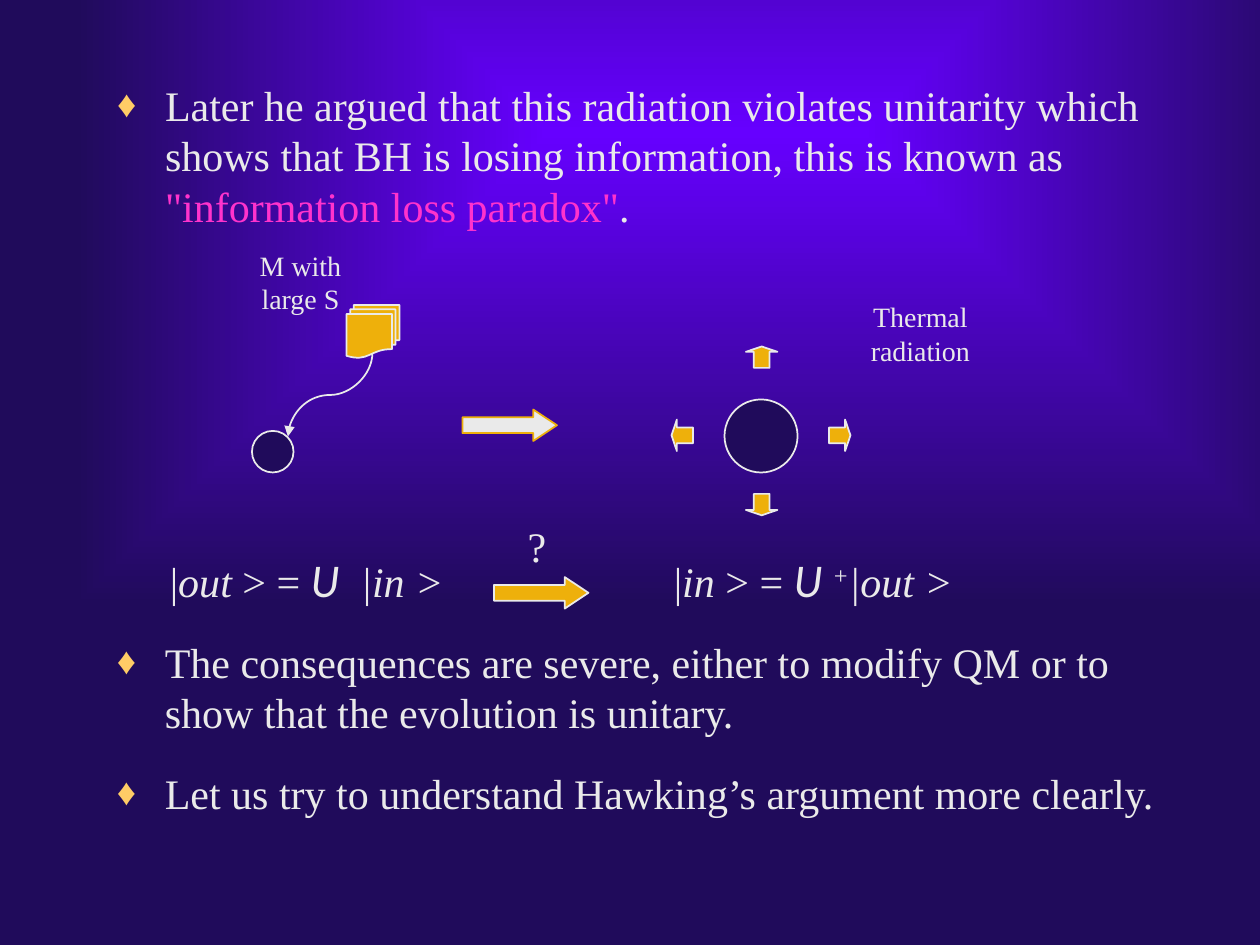
from lxml.etree import SubElement
from pptx import Presentation
from pptx.dml.color import RGBColor
from pptx.enum.shapes import MSO_CONNECTOR, MSO_SHAPE
from pptx.enum.text import MSO_ANCHOR, MSO_AUTO_SIZE, PP_ALIGN
from pptx.oxml import parse_xml
from pptx.oxml.ns import nsdecls, qn
from pptx.util import Inches, Pt

NAVY = RGBColor(0x20, 0x0B, 0x5B)
VIOLET = RGBColor(0x66, 0x00, 0xFF)
PALE = RGBColor(0xEA, 0xEA, 0xEA)
GOLD = RGBColor(0xEE, 0xB0, 0x0B)
PINK = RGBColor(0xFF, 0x33, 0xCC)
BULLET = RGBColor(0xFF, 0xCC, 0x66)
SERIF = "Times New Roman"
SANS = "Lato"


class SlideBuilder:
    """Holds the text style and the current slide, and draws its elements."""

    def __init__(self, slide, font=SERIF, color=PALE):
        self.slide = slide
        self.font = font
        self.color = color

    def background(self, inner, outer):
        common = self.slide._element.cSld
        common.insert(0, parse_xml(
            f'<p:bg {nsdecls("p", "a")}><p:bgPr><a:gradFill rotWithShape="0"><a:gsLst>'
            f'<a:gs pos="0"><a:srgbClr val="{inner}"/></a:gs>'
            f'<a:gs pos="100000"><a:srgbClr val="{outer}"/></a:gs></a:gsLst>'
            '<a:path path="shape"><a:fillToRect l="14000" t="6000" r="1000" b="78000"/></a:path>'
            '</a:gradFill><a:effectLst/></p:bgPr></p:bg>'))

    def add_spans(self, para, spans, size):
        for text, *style in spans:
            options = style[0] if style else {}
            span = para.add_run()
            span.text = text
            span.font.size = Pt(size)
            span.font.name = options.get("font", self.font)
            span.font.italic = options.get("italic", False)
            span.font.color.rgb = options.get("color", self.color)
            if options.get("raised"):
                span._r.get_or_add_rPr().set("baseline", "30000")

    def text_box(self, left, top, width, height):
        box = self.slide.shapes.add_textbox(
            Inches(left), Inches(top), Inches(width), Inches(height))
        box.text_frame.word_wrap = True
        return box

    def label(self, text, left, top, width, height, size):
        para = self.text_box(left, top, width, height).text_frame.paragraphs[0]
        para.alignment = PP_ALIGN.CENTER
        self.add_spans(para, [(text,)], size)

    def equation(self, spans, left, top, width, height):
        box = self.text_box(left, top, width, height)
        self.add_spans(box.text_frame.paragraphs[0], spans, 24)

    def bullets(self, box, items, gap=0):
        frame = box.text_frame
        for index, spans in enumerate(items):
            para = frame.add_paragraph() if index else frame.paragraphs[0]
            para.space_before = Pt(gap if index else 4.8)
            properties = para._p.get_or_add_pPr()
            properties.set("marL", str(Inches(0.38)))
            properties.set("indent", str(-Inches(0.38)))
            color = SubElement(properties, qn("a:buClr"))
            SubElement(color, qn("a:srgbClr"), val=str(BULLET))
            SubElement(properties, qn("a:buSzPct"), val="90000")
            SubElement(properties, qn("a:buFont"), typeface=self.font)
            SubElement(properties, qn("a:buChar"), char="♦")
            self.add_spans(para, spans, 24)

    def body(self, items, left, top, width, height):
        box = self.slide.placeholders[1]
        box.left, box.top = Inches(left), Inches(top)
        box.width, box.height = Inches(width), Inches(height)
        box.text_frame.auto_size = MSO_AUTO_SIZE.NONE
        box.text_frame.vertical_anchor = MSO_ANCHOR.TOP
        self.bullets(box, items)

    def shape(self, kind, left, top, width, height, fill, line=PALE, adjustments=()):
        shape = self.slide.shapes.add_shape(
            kind, Inches(left), Inches(top), Inches(width), Inches(height))
        shape.shadow.inherit = False
        shape.fill.solid()
        shape.fill.fore_color.rgb = fill
        shape.line.color.rgb = line
        shape.line.width = Pt(1)
        for index, value in enumerate(adjustments):
            shape.adjustments[index] = value

    def falling_curve(self, left, top, width, height):
        curve = self.slide.shapes.add_connector(
            MSO_CONNECTOR.CURVE, Inches(left), Inches(top),
            Inches(left + width), Inches(top + height))
        curve.line.color.rgb = PALE
        curve.line.width = Pt(1)
        properties = curve._element.spPr
        properties.find(qn("a:xfrm")).set("rot", "5400000")
        SubElement(properties.find(qn("a:ln")), qn("a:tailEnd"), type="triangle")
        SubElement(properties, qn("a:effectLst"))


def main():
    deck = Presentation()
    deck.slide_width, deck.slide_height = Inches(10), Inches(7.5)
    page = deck.slides.add_slide(deck.slide_layouts[1])
    title = page.shapes.title._element
    title.getparent().remove(title)
    builder = SlideBuilder(page)
    builder.background(VIOLET, NAVY)

    builder.body([[
        ("Later he argued that this radiation violates unitarity which shows "
         "that BH is losing information, this is known as ",),
        ('"information loss paradox"', {"color": PINK}),
        (".",)]], 0.83, 0.58, 8.67, 1.35)

    builder.shape(MSO_SHAPE.OVAL, 2, 3.42, 0.33, 0.33, NAVY)
    builder.shape(MSO_SHAPE.FLOWCHART_MULTIDOCUMENT, 2.75, 2.42, 0.42, 0.42, GOLD)
    builder.falling_curve(2.29, 2.8, 0.66, 0.67)
    builder.label("M with large S", 1.75, 1.92, 1.27, 0.64, 16)

    builder.shape(MSO_SHAPE.OVAL, 5.75, 3.17, 0.58, 0.58, NAVY)
    for kind, left, top, width, height in (
            (MSO_SHAPE.DOWN_ARROW, 5.92, 3.92, 0.25, 0.17),
            (MSO_SHAPE.UP_ARROW, 5.92, 2.75, 0.25, 0.17),
            (MSO_SHAPE.LEFT_ARROW, 5.33, 3.33, 0.17, 0.25),
            (MSO_SHAPE.RIGHT_ARROW, 6.58, 3.33, 0.17, 0.25)):
        builder.shape(kind, left, top, width, height, GOLD, adjustments=(0.5, 0.25))
    builder.label("Thermal radiation", 6.67, 2.33, 1.27, 0.64, 16)

    for left, top, fill, line in ((3.67, 3.25, PALE, GOLD), (3.92, 4.58, GOLD, PALE)):
        builder.shape(MSO_SHAPE.RIGHT_ARROW, left, top, 0.75, 0.25, fill, line, (0.5, 0.75))
    builder.label("?", 4.09, 4.08, 0.33, 0.5, 24)

    italic = {"italic": True}
    operator = {"italic": True, "font": SANS}
    builder.equation(
        [("|",), ("out", italic), (" > = ",), ("U", operator), ("  |in >", italic)],
        1.25, 4.36, 2.6, 0.5)
    builder.equation(
        [("|",), ("in", italic), (" > = ",), ("U ", operator),
         ("+", {"italic": True, "raised": True}), ("|out >", italic)],
        5.25, 4.36, 2.6, 0.5)

    conclusions = builder.text_box(0.83, 5, 8.67, 1.6)
    builder.bullets(conclusions, [
        [("The consequences are severe, either to modify QM or to show that "
          "the evolution is unitary.",)],
        [("Let us try to understand Hawking’s argument more clearly.",)]], gap=17.4)

    deck.save("out.pptx")


if __name__ == "__main__":
    main()
